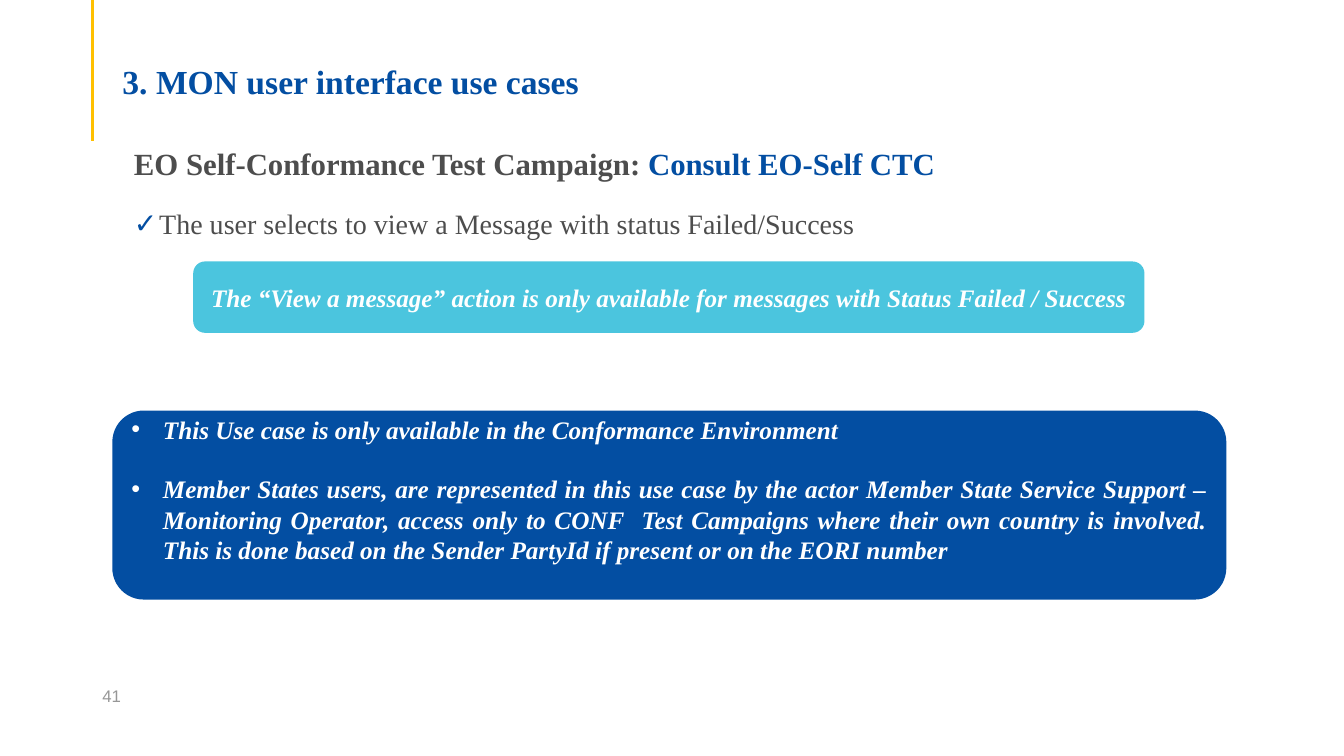
from pptx import Presentation
from pptx.dml.color import RGBColor
from pptx.enum.shapes import MSO_CONNECTOR, MSO_SHAPE
from pptx.enum.text import MSO_ANCHOR, MSO_AUTO_SIZE, PP_ALIGN
from pptx.oxml import parse_xml
from pptx.oxml.ns import nsdecls
from pptx.util import Pt

PX = 9525
COLORS = {"blue": "034EA2", "cyan": "4BC5DE", "yellow": "FFC000",
          "text": "4D4D4D", "number": "979797", "white": "FFFFFF"}
SERIF = "Times New Roman"


def box(*lengths):
    return [n * PX for n in lengths]


def write(p, text, size=18, color="white", font=SERIF, bold=False, italic=False,
          align=PP_ALIGN.LEFT, before=0, after=0, bullet=None, bullet_color="white", indent=0):
    pPr = p._p.get_or_add_pPr()
    if not len(pPr):
        pPr.set("marL", str(indent * PX))
        pPr.set("indent", str(-indent * PX))
        if bullet:
            pPr.append(parse_xml(f'<a:buClr {nsdecls("a")}><a:srgbClr val="{COLORS[bullet_color]}"/></a:buClr>'))
            pPr.append(parse_xml(f'<a:buFont {nsdecls("a")} typeface="Arial"/>'))
            pPr.append(parse_xml(f'<a:buChar {nsdecls("a")} char="{bullet}"/>'))
        else:
            pPr.append(parse_xml(f'<a:buNone {nsdecls("a")}/>'))
        p.alignment = align
        p.space_before, p.space_after = Pt(before), Pt(after)
    r = p.add_run()
    r.text = text
    r.font.name, r.font.size = font, Pt(size)
    r.font.bold, r.font.italic = bold, italic
    r.font.color.rgb = RGBColor.from_string(COLORS[color])


prs = Presentation()
prs.slide_width, prs.slide_height = box(1280, 720)
s = prs.slides.add_slide(prs.slide_layouts[1])

line = s.shapes.add_connector(MSO_CONNECTOR.STRAIGHT, *box(88, 0, 88, 134))
line.line.color.rgb = RGBColor.from_string(COLORS["yellow"])
line.line.width = Pt(2.25)
line._element.spPr.append(parse_xml(f'<a:effectLst {nsdecls("a")}/>'))

title, body = s.shapes.title, s.placeholders[1]
for sp, place in [(title, (107, 50, 1104, 47)), (body, (118, 133, 1049, 47))]:
    sp.left, sp.top, sp.width, sp.height = box(*place)
    sp.text_frame.word_wrap = True
    sp.text_frame.auto_size = MSO_AUTO_SIZE.NONE

tf = title.text_frame
tf.vertical_anchor = MSO_ANCHOR.BOTTOM
tf.margin_bottom = 0
write(tf.paragraphs[0], "3. MON user interface use cases", size=24, color="blue", bold=True)
tf.paragraphs[0].line_spacing = 0.9

tf = body.text_frame
tf.vertical_anchor = MSO_ANCHOR.TOP
p = tf.paragraphs[0]
write(p, "EO Self-Conformance Test Campaign: ", size=22, color="text", bold=True,
      align=PP_ALIGN.JUSTIFY, after=18)
write(p, "Consult EO-Self CTC", size=22, color="blue", bold=True)
write(tf.add_paragraph(), "The user selects to view a Message with status Failed/Success",
      size=20, color="text", after=18, bullet="✓", bullet_color="blue", indent=24)

frames = []
for place, fill in [((184, 249, 906, 68), "cyan"), ((107, 391, 1061, 180), "blue")]:
    sp = s.shapes.add_shape(MSO_SHAPE.ROUNDED_RECTANGLE, *box(*place))
    sp.shadow.inherit = False
    sp.fill.solid()
    sp.fill.fore_color.rgb = RGBColor.from_string(COLORS[fill])
    sp.line.fill.background()
    sp.text_frame.word_wrap = True
    sp.text_frame.vertical_anchor = MSO_ANCHOR.MIDDLE
    frames.append(sp.text_frame)
callout, notice = frames

write(callout.paragraphs[0],
      "The “View a message” action is only available for messages with Status Failed / Success",
      bold=True, italic=True, align=PP_ALIGN.CENTER)

notice.margin_top, notice.margin_bottom = box(0, 30)
bullet_format = dict(bold=True, italic=True, align=PP_ALIGN.JUSTIFY, bullet="•", indent=30)
write(notice.paragraphs[0], "This Use case is only available in the Conformance Environment",
      **bullet_format)
write(notice.add_paragraph(),
      "Member States users, are represented in this use case by the actor Member State Service "
      "Support – Monitoring Operator, access only to CONF  Test Campaigns where their own country "
      "is involved. This is done based on the Sender PartyId if present or on the EORI number",
      before=21, **bullet_format)

tf = s.shapes.add_textbox(*box(88, 644, 288, 38)).text_frame
tf.word_wrap = True
tf.vertical_anchor = MSO_ANCHOR.MIDDLE
write(tf.paragraphs[0], "41", size=12, color="number", font="Arial")

prs.save("out.pptx")
